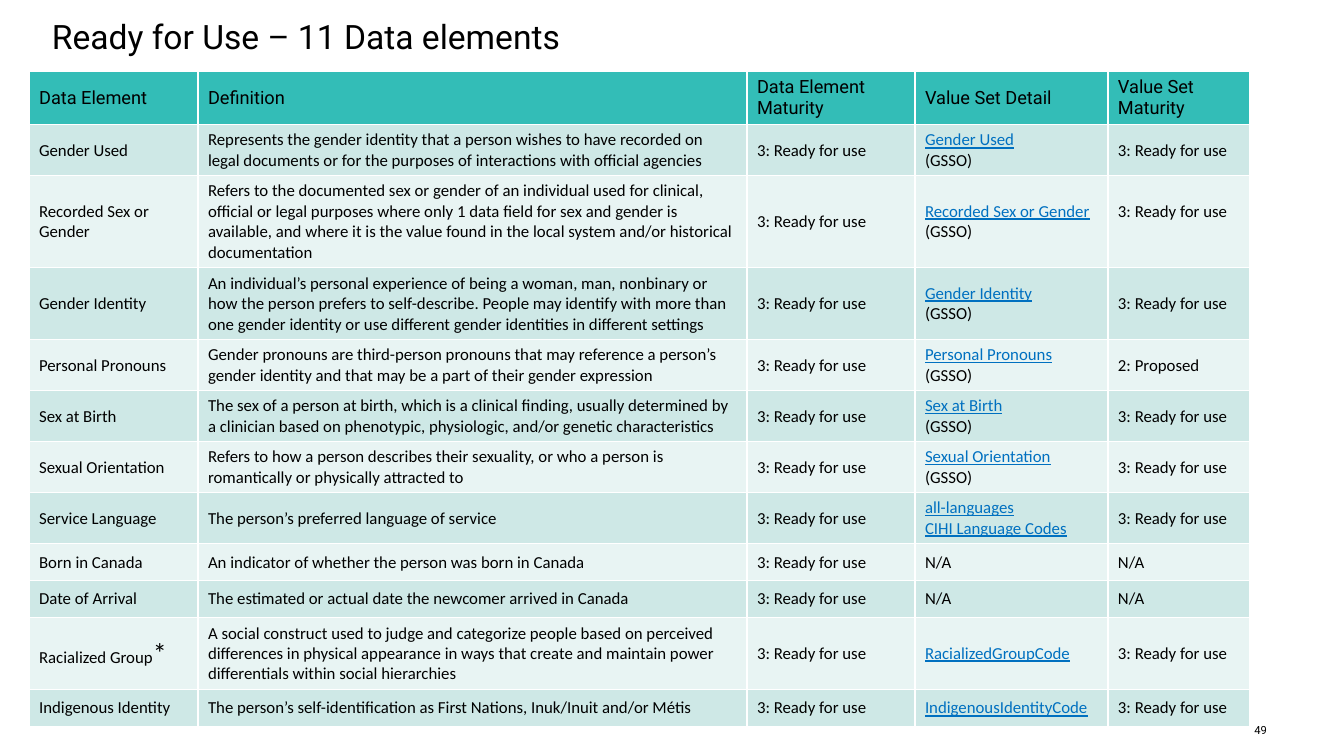
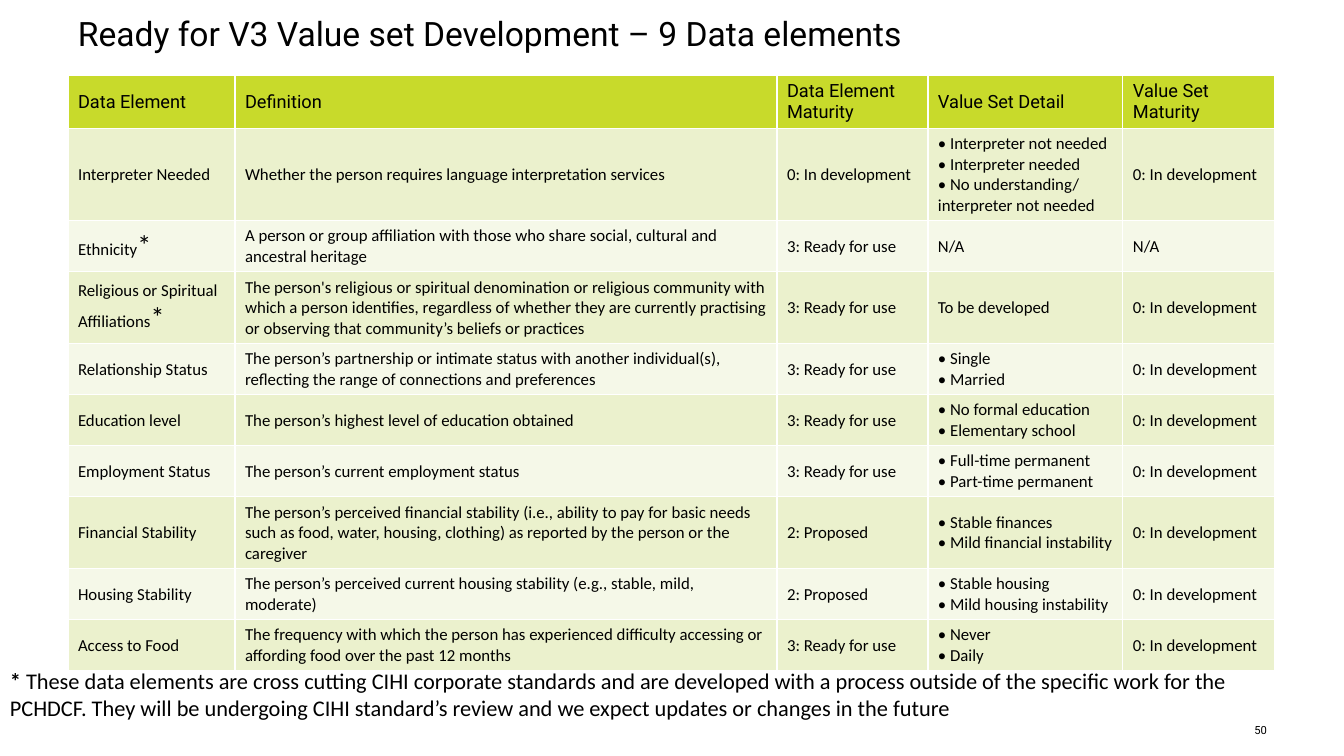
from pptx import Presentation
from pptx.dml.color import RGBColor as RGB
from pptx.enum.text import MSO_ANCHOR as ANCHOR, PP_ALIGN as ALIGN
from pptx.util import Emu, Pt

BLACK = RGB(0x00, 0x00, 0x00)
LINK = RGB(0x00, 0x70, 0xC0)
# Header, odd row and even row fills
TEAL = (RGB(0x33, 0xBD, 0xB7), RGB(0xCE, 0xE8, 0xE6), RGB(0xE8, 0xF4, 0xF3))
LIME = (RGB(0xC8, 0xDA, 0x2B), RGB(0xEB, 0xF1, 0xCD), RGB(0xF5, 0xF8, 0xE8))
HEAD_FONT, BODY_FONT = "Roboto", "Calibri"

READY = "3: Ready for use"
PROPOSED = "2: Proposed"
DEVEL = "0: In development"
HEADS = ("Data Element", "Definition", "Data Element Maturity",
         "Value Set Detail", "Value Set Maturity")


def px(n):
    return Emu(round(n * 914400 / 100.8))


# Text
def style(para, size, name, color=BLACK, bold=False):
    font = para.font
    font.size, font.name, font.bold = Pt(size), name, bold
    font.color.rgb = color


def add_box(slide, x, y, w, h, anchor=ANCHOR.TOP):
    frame = slide.shapes.add_textbox(px(x), px(y), px(w), px(h)).text_frame
    frame.word_wrap = True
    frame.vertical_anchor = anchor
    return frame


def add_title(slide, text, x, y):
    para = add_box(slide, x, y, 1209, 50, ANCHOR.BOTTOM).paragraphs[0]
    para.text = text
    para.line_spacing = 0.9
    style(para, 24, HEAD_FONT)


def add_number(slide, number):
    frame = add_box(slide, 1204, 724, 63, 13, ANCHOR.MIDDLE)
    frame.margin_left = frame.margin_right = 0
    frame.margin_top = frame.margin_bottom = 0
    para = frame.paragraphs[0]
    para.text = str(number)
    para.alignment = ALIGN.RIGHT
    style(para, 8, HEAD_FONT)


def add_note(slide, text):
    para = add_box(slide, 0, 662, 1250, 65).paragraphs[0]
    style(para, 16, BODY_FONT)
    star = para.add_run()
    star.text = "*"
    star.font.bold = True
    para.add_run().text = text


# Table: a line in [brackets] is a link, a final * is a large mark
def fill_line(para, line, size, name):
    linked = line.startswith("[")
    style(para, size, name, LINK if linked else BLACK)
    para.font.underline = linked
    para.add_run().text = line.strip("[]").rstrip("*")
    if line.endswith("*"):
        mark = para.add_run()
        mark.text = "*"
        mark.font.size = Pt(20)


def fill_cell(cell, text, color, size, name):
    cell.fill.solid()
    cell.fill.fore_color.rgb = color
    cell.vertical_anchor = ANCHOR.MIDDLE
    frame = cell.text_frame
    for i, line in enumerate(text.split("\n")):
        para = frame.add_paragraph() if i else frame.paragraphs[0]
        fill_line(para, line, size, name)


def add_grid(slide, x, y, widths, heights, rows, fills):
    table = slide.shapes.add_table(
        len(heights), len(widths), px(x), px(y),
        px(sum(widths)), px(sum(heights))).table
    for col, width in zip(table.columns, widths):
        col.width = px(width)
    for row, height in zip(table.rows, heights):
        row.height = px(height)
    head, odd, even = fills
    for r, row in enumerate([HEADS, *rows]):
        size, name = (12, BODY_FONT) if r else (13, HEAD_FONT)
        color = (odd if r % 2 else even) if r else head
        for c, text in enumerate(row):
            fill_cell(table.cell(r, c), text, color, size, name)
    return table


def add_page(deck, title, x, y, number):
    slide = deck.slides.add_slide(deck.slide_layouts[6])
    add_number(slide, number)
    add_title(slide, title, x, y)
    return slide


# Content
def gsso(name, text, state=READY):
    return name, text, READY, f"[{name}]\n(GSSO)", state


USE_ROWS = [
    gsso("Gender Used",
         "Represents the gender identity that a person wishes to have recorded "
         "on legal documents or for the purposes of interactions with official "
         "agencies"),
    gsso("Recorded Sex or Gender",
         "Refers to the documented sex or gender of an individual used for "
         "clinical, official or legal purposes where only 1 data field for sex "
         "and gender is available, and where it is the value found in the local "
         "system and/or historical documentation"),
    gsso("Gender Identity",
         "An individual’s personal experience of being a woman, man, nonbinary "
         "or how the person prefers to self-describe. People may identify with "
         "more than one gender identity or use different gender identities in "
         "different settings"),
    gsso("Personal Pronouns",
         "Gender pronouns are third-person pronouns that may reference a "
         "person’s gender identity and that may be a part of their gender "
         "expression", PROPOSED),
    gsso("Sex at Birth",
         "The sex of a person at birth, which is a clinical finding, usually "
         "determined by a clinician based on phenotypic, physiologic, and/or "
         "genetic characteristics"),
    gsso("Sexual Orientation",
         "Refers to how a person describes their sexuality, or who a person is "
         "romantically or physically attracted to"),
    ("Service Language", "The person’s preferred language of service",
     READY, "[all-languages]\n[CIHI Language Codes]", READY),
    ("Born in Canada", "An indicator of whether the person was born in Canada",
     READY, "N/A", "N/A"),
    ("Date of Arrival",
     "The estimated or actual date the newcomer arrived in Canada",
     READY, "N/A", "N/A"),
    ("Racialized Group*",
     "A social construct used to judge and categorize people based on perceived "
     "differences in physical appearance in ways that create and maintain power "
     "differentials within social hierarchies",
     READY, "[RacializedGroupCode]", READY),
    ("Indigenous Identity",
     "The person’s self-identification as First Nations, Inuk/Inuit and/or Métis",
     READY, "[IndigenousIdentityCode]", READY),
]

SET_ROWS = [
    ("Interpreter Needed",
     "Whether the person requires language interpretation services", DEVEL,
     "• Interpreter not needed\n• Interpreter needed\n"
     "• No understanding/ interpreter not needed", DEVEL),
    ("Ethnicity*",
     "A person or group affiliation with those who share social, cultural and "
     "ancestral heritage", READY, "N/A", "N/A"),
    ("Religious or Spiritual Affiliations*",
     "The person's religious or spiritual denomination or religious community "
     "with which a person identifies, regardless of whether they are currently "
     "practising or observing that community’s beliefs or practices",
     READY, "To be developed", DEVEL),
    ("Relationship Status",
     "The person’s partnership or intimate status with another individual(s), "
     "reflecting the range of connections and preferences",
     READY, "• Single\n• Married", DEVEL),
    ("Education level", "The person’s highest level of education obtained",
     READY, "• No formal education\n• Elementary school", DEVEL),
    ("Employment Status", "The person’s current employment status",
     READY, "• Full-time permanent\n• Part-time permanent", DEVEL),
    ("Financial Stability",
     "The person’s perceived financial stability (i.e., ability to pay for "
     "basic needs such as food, water, housing, clothing) as reported by the "
     "person or the caregiver",
     PROPOSED, "• Stable finances\n• Mild financial instability", DEVEL),
    ("Housing Stability",
     "The person’s perceived current housing stability (e.g., stable, mild, "
     "moderate)",
     PROPOSED, "• Stable housing\n• Mild housing instability", DEVEL),
    ("Access to Food",
     "The frequency with which the person has experienced difficulty accessing "
     "or affording food over the past 12 months",
     READY, "• Never\n• Daily", DEVEL),
]

NOTE = (" These data elements are cross cutting CIHI corporate standards and are "
        "developed with a process outside of the specific work for the PCHDCF. "
        "They will be undergoing CIHI standard’s review and we expect updates or "
        "changes in the future")


def main():
    deck = Presentation()
    deck.slide_width, deck.slide_height = px(1344), px(756)

    # Elements ready for use
    slide = add_page(deck, "Ready for Use – 11 Data elements", 42, 12, 49)
    table = add_grid(slide, 29, 71, (169, 549, 168, 193, 142),
                     (52, 51, 92, 72, 51, 51, 51, 51, 37, 37, 72, 37),
                     USE_ROWS, TEAL)
    table.cell(2, 4).margin_bottom = px(25)

    # Elements ready for value set work
    slide = add_page(deck, "Ready for V3 Value set Development – 9 Data elements",
                     68, 9, 50)
    add_grid(slide, 68, 75, (167, 542, 151, 195, 152),
             (51, 92, 51, 72, 51, 51, 51, 72, 51, 51), SET_ROWS, LIME)
    add_note(slide, NOTE)

    deck.save("out.pptx")


if __name__ == "__main__":
    main()
